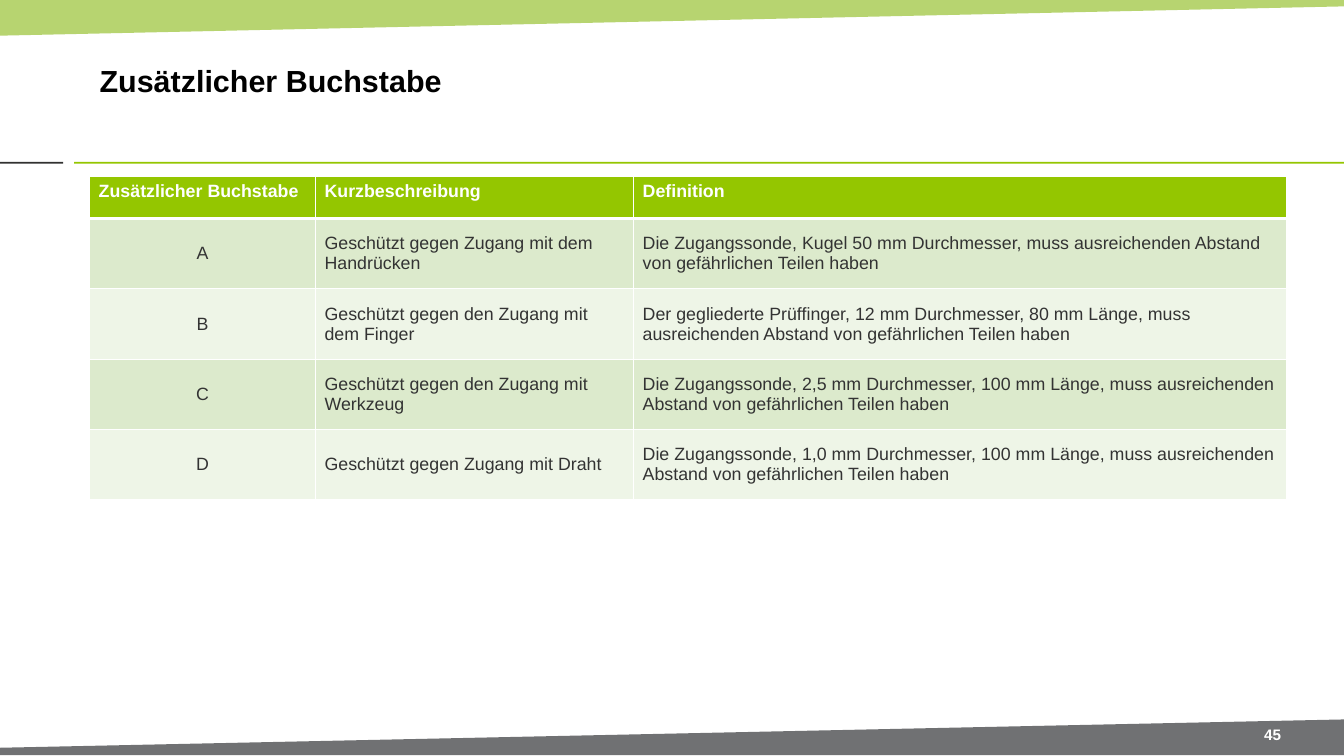
from lxml import etree
from pptx import Presentation
from pptx.dml.color import RGBColor
from pptx.enum import shapes, text
from pptx.oxml import ns
from pptx.util import Inches, Pt

WHITE = RGBColor(0xFF, 0xFF, 0xFF)
BLACK = RGBColor(0x00, 0x00, 0x00)
BODY_TEXT = RGBColor(0x33, 0x33, 0x33)
DARK = RGBColor(0x31, 0x31, 0x30)
GREY = RGBColor(0x70, 0x71, 0x73)
GREEN = RGBColor(0x94, 0xC6, 0x00)
BAND_GREEN = RGBColor(0x95, 0xC0, 0x2A)
ROW_FILLS = (RGBColor(0xDC, 0xEA, 0xCC), RGBColor(0xEE, 0xF5, 0xE7))

WIDTH, HEIGHT = 14.7, 8.27
COLUMN_WIDTHS = (2.47, 3.48, 7.14)
HEADER_HEIGHT, ROW_HEIGHT = 0.46, 0.77
ROWS = (
    ("Zusätzlicher Buchstabe", "Kurzbeschreibung", "Definition"),
    ("A", "Geschützt gegen Zugang mit dem Handrücken",
     "Die Zugangssonde, Kugel 50 mm Durchmesser, muss ausreichenden Abstand "
     "von gefährlichen Teilen haben"),
    ("B", "Geschützt gegen den Zugang mit dem Finger",
     "Der gegliederte Prüffinger, 12 mm Durchmesser, 80 mm Länge, muss "
     "ausreichenden Abstand von gefährlichen Teilen haben"),
    ("C", "Geschützt gegen den Zugang mit Werkzeug",
     "Die Zugangssonde, 2,5 mm Durchmesser, 100 mm Länge, muss ausreichenden "
     "Abstand von gefährlichen Teilen haben"),
    ("D", "Geschützt gegen Zugang mit Draht",
     "Die Zugangssonde, 1,0 mm Durchmesser, 100 mm Länge, muss ausreichenden "
     "Abstand von gefährlichen Teilen haben"),
)


def paint(shape, color):
    shape.shadow.inherit = False
    shape.fill.solid()
    shape.fill.fore_color.rgb = color
    shape.line.fill.background()


def add_band(slide, corners, color, opacity=100):
    """Draw a slanted band; opacity is a percentage."""
    points = [(Inches(x), Inches(y)) for x, y in corners]
    builder = slide.shapes.build_freeform(*points[0])
    builder.add_line_segments(points[1:], close=True)
    band = builder.convert_to_shape()
    paint(band, color)
    if opacity < 100:
        tint = band.fill._xPr.find(".//" + ns.qn("a:srgbClr"))
        etree.SubElement(tint, ns.qn("a:alpha"), val=str(opacity * 1000))


def add_rule(slide, left, width, color):
    rule = slide.shapes.add_shape(
        shapes.MSO_SHAPE.RECTANGLE,
        Inches(left), Inches(1.77), Inches(width), Inches(0.02))
    paint(rule, color)


def write(frame, words, size, color, bold, align=text.PP_ALIGN.LEFT):
    para = frame.paragraphs[0]
    para.alignment = align
    span = para.add_run()
    span.text = words
    span.font.name = "Arial"
    span.font.size = Pt(size)
    span.font.bold = bold
    span.font.color.rgb = color


def add_label(slide, bounds, words, size, color, align):
    box = slide.shapes.add_textbox(*map(Inches, bounds))
    frame = box.text_frame
    frame.word_wrap = True
    frame.vertical_anchor = text.MSO_ANCHOR.MIDDLE
    frame.margin_left = frame.margin_right = Inches(0.11)
    frame.margin_top = frame.margin_bottom = Inches(0.06)
    write(frame, words, size, color, True, align)


def set_borders(cell, top, bottom):
    """Give a cell white borders; top and bottom are widths in points."""
    properties = cell._tc.get_or_add_tcPr()
    for side, width in (("L", 1), ("R", 1), ("T", top), ("B", bottom)):
        line = etree.SubElement(
            properties, ns.qn(f"a:ln{side}"), w=str(Pt(width)))
        fill = etree.SubElement(line, ns.qn("a:solidFill"))
        etree.SubElement(fill, ns.qn("a:srgbClr"), val=str(WHITE))


def fill_cell(cell, words, row, column):
    header = row == 0
    set_borders(cell, 3 if row == 1 else 1, 3 if header else 1)
    cell.fill.solid()
    cell.fill.fore_color.rgb = GREEN if header else ROW_FILLS[(row - 1) % 2]
    cell.margin_left = cell.margin_right = Inches(0.1)
    cell.margin_top = cell.margin_bottom = Inches(0.05 if header else 0.1)
    cell.vertical_anchor = (
        text.MSO_ANCHOR.TOP if header else text.MSO_ANCHOR.MIDDLE)
    centred = column == 0 and not header
    write(cell.text_frame, words, 14, WHITE if header else BODY_TEXT, header,
          text.PP_ALIGN.CENTER if centred else text.PP_ALIGN.LEFT)


def add_letter_table(slide):
    height = HEADER_HEIGHT + ROW_HEIGHT * (len(ROWS) - 1)
    table = slide.shapes.add_table(
        len(ROWS), len(COLUMN_WIDTHS), Inches(0.98), Inches(1.93),
        Inches(sum(COLUMN_WIDTHS)), Inches(height)).table
    for column, width in zip(table.columns, COLUMN_WIDTHS):
        column.width = Inches(width)
    for row, entries in enumerate(ROWS):
        table.rows[row].height = Inches(ROW_HEIGHT if row else HEADER_HEIGHT)
        for column, words in enumerate(entries):
            fill_cell(table.cell(row, column), words, row, column)


def main():
    deck = Presentation()
    deck.slide_width, deck.slide_height = Inches(WIDTH), Inches(HEIGHT)
    slide = deck.slides.add_slide(deck.slide_layouts[6])
    add_band(slide, ((0, 0), (WIDTH, 0), (WIDTH, 0.07), (0, 0.39)),
             BAND_GREEN, 67)
    add_rule(slide, 0, 0.69, DARK)
    add_rule(slide, 0.81, WIDTH - 0.81, GREEN)
    add_band(slide, ((WIDTH, 8.26), (0, 8.26), (0, 8.18), (WIDTH, 7.87)), GREY)
    add_label(slide, (0.98, 0.28, 11.54, 1.19), "Zusätzlicher Buchstabe",
              24, BLACK, text.PP_ALIGN.LEFT)
    add_label(slide, (13.49, 7.89, 0.86, 0.29), "45",
              12, WHITE, text.PP_ALIGN.CENTER)
    add_letter_table(slide)
    deck.save("out.pptx")


if __name__ == "__main__":
    main()
